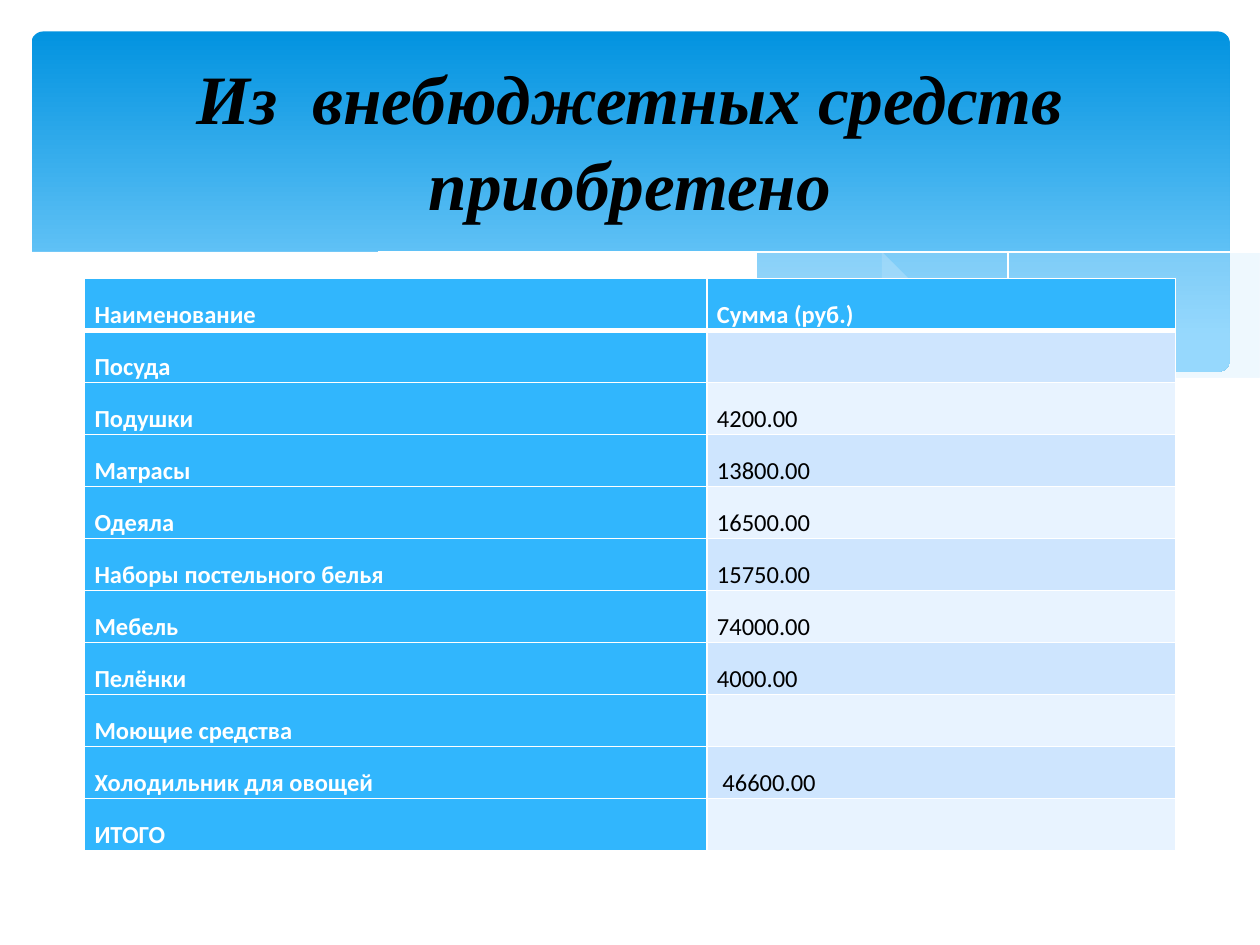
from dataclasses import dataclass

from lxml.etree import SubElement
from pptx import Presentation
from pptx.dml.color import RGBColor
from pptx.enum.shapes import MSO_SHAPE
from pptx.enum.text import MSO_ANCHOR, PP_ALIGN
from pptx.oxml.ns import qn
from pptx.util import Inches, Pt


@dataclass(frozen=True)
class Theme:
    sky_top: str = "0293E0"
    sky_bottom: str = "83D3FE"
    wave: str = "C6E7FC"
    white: str = "FFFFFF"
    black: str = "000000"
    accent: str = "31B6FD"
    bands: tuple = ("CEE5FE", "E8F3FF")
    title_font: str = "Times New Roman"
    table_font: str = "Calibri"
    title_size: float = 39.6
    table_size: float = 14


THEME = Theme()

TITLE_LINES = ("Из  внебюджетных средств", "приобретено")
PURCHASES = [
    ("Наименование", "Сумма (руб.)"),
    ("Посуда", ""),
    ("Подушки", "4200.00"),
    ("Матрасы", "13800.00"),
    ("Одеяла", "16500.00"),
    ("Наборы постельного белья", "15750.00"),
    ("Мебель", "74000.00"),
    ("Пелёнки", "4000.00"),
    ("Моющие средства", ""),
    ("Холодильник для овощей", "\u00a046600.00"),
    ("ИТОГО", ""),
]

# Wave edges, in inches; smooth() rounds them
RIGHT_WAVE_TOP = [(9.76, 2), (9.35, 2.07), (8.61, 2.23), (7.79, 2.42), (7.06, 2.57), (6.61, 2.65)]
RIGHT_WAVE_BOTTOM = [(6.61, 2.65), (7.05, 2.71), (7.57, 2.76), (8.03, 2.78), (8.54, 2.76),
                     (8.97, 2.7), (9.35, 2.62), (9.76, 2.47)]
MIDDLE_WAVE_TOP = [(8.93, 2.73), (8.37, 2.65), (7.41, 2.47), (6.29, 2.22), (5.55, 2.05),
                   (4.89, 1.94), (4.2, 1.87), (3.61, 1.85), (3.13, 1.88), (2.86, 1.91)]
MIDDLE_WAVE_BOTTOM = [(2.86, 1.91), (3.62, 2.03), (4.49, 2.22), (5.66, 2.48), (6.5, 2.64),
                      (7.22, 2.74), (7.85, 2.78), (8.38, 2.78), (8.93, 2.73)]
LONG_CREST = [(3.09, 1.95), (3.44, 1.9), (4.01, 1.87), (4.69, 1.89), (5.56, 1.97),
              (6.36, 2.08), (7.27, 2.26), (8.31, 2.51), (9.07, 2.72)]
RIGHT_CREST = [(6.13, 2.57), (6.72, 2.41), (7.48, 2.23), (8.36, 2.04), (9.1, 1.92), (9.75, 1.85)]
FRONT_WAVE_TOP = [(9.77, 2.46), (9.3, 2.62), (8.75, 2.73), (8.09, 2.77), (7.44, 2.74),
                  (6.68, 2.65), (5.79, 2.5), (5.03, 2.33), (4.18, 2.13), (3.4, 1.97),
                  (2.71, 1.88), (2.11, 1.84), (1.61, 1.84), (1.06, 1.89), (0.59, 1.99), (0.23, 2.13)]
FRONT_WAVE_BASE = [(0.23, 3.29), (9.77, 3.29)]


def rgb(color):
    return RGBColor.from_string(color)


def smooth(knots, steps=5):
    """Catmull-Rom curve through the knots."""
    padded = [knots[0], *knots, knots[-1]]
    curve = [knots[0]]
    for a, b, c, d in zip(padded, padded[1:], padded[2:], padded[3:]):
        for t in (step / steps for step in range(1, steps + 1)):
            curve.append(tuple(
                (2 * q + (r - p) * t + (2 * p - 5 * q + 4 * r - s) * t**2
                 + (3 * q - p - 3 * r + s) * t**3) / 2
                for p, q, r, s in zip(a, b, c, d)))
    return curve


def add_outline(slide, points, closed):
    builder = slide.shapes.build_freeform(*points[0], scale=Inches(1))
    builder.add_line_segments(points[1:], close=closed)
    outline = builder.convert_to_shape()
    outline.shadow.inherit = False
    return outline


def add_wave(slide, points, color, opacity=100):
    wave = add_outline(slide, points, closed=True)
    wave.fill.solid()
    wave.fill.fore_color.rgb = rgb(color)
    wave.line.fill.background()
    if opacity < 100:
        color_node = wave.fill._xPr.find(qn("a:solidFill"))[0]
        SubElement(color_node, qn("a:alpha"), val=str(opacity * 1000))


def add_crest(slide, knots):
    crest = add_outline(slide, smooth(knots), closed=False)
    crest.fill.background()
    crest.line.color.rgb = rgb(THEME.white)
    crest.line.width = Pt(0)


def add_sky(slide):
    sky = slide.shapes.add_shape(MSO_SHAPE.ROUNDED_RECTANGLE,
                                 Inches(0.25), Inches(0.25), Inches(9.51), Inches(2.7))
    sky.adjustments[0] = 0.034
    sky.shadow.inherit = False
    sky.line.fill.background()
    sky.fill.gradient()
    sky.fill.gradient_angle = 270
    stops = ((0, THEME.sky_top), (0.9, THEME.sky_bottom))
    for stop, (position, color) in zip(sky.fill.gradient_stops, stops):
        stop.position = position
        stop.color.rgb = rgb(color)


def add_run(paragraph, text, font, size, color, bold=False, italic=False):
    run = paragraph.add_run()
    run.text = text
    run.font.name = font
    run.font.size = Pt(size)
    run.font.color.rgb = rgb(color)
    run.font.bold = bold
    run.font.italic = italic


def add_title(slide):
    title = slide.shapes.add_textbox(Inches(0.5), Inches(0.41), Inches(9), Inches(1.37))
    frame = title.text_frame
    frame.word_wrap = True
    frame.vertical_anchor = MSO_ANCHOR.MIDDLE
    paragraph = frame.paragraphs[0]
    paragraph.alignment = PP_ALIGN.CENTER
    paragraph.line_spacing = 1.04
    for index, line in enumerate(TITLE_LINES):
        if index:
            paragraph.add_line_break()
        add_run(paragraph, line, THEME.title_font, THEME.title_size, THEME.black,
                bold=True, italic=True)


def set_borders(cell, top, bottom):
    properties = cell._tc.get_or_add_tcPr()
    for side, width in (("L", 1), ("R", 1), ("T", top), ("B", bottom)):
        border = SubElement(properties, qn(f"a:ln{side}"), w=str(Pt(width)))
        fill = SubElement(border, qn("a:solidFill"))
        SubElement(fill, qn("a:srgbClr"), val=THEME.white)


def fill_cell(cell, text, row, column):
    strong = row == 0 or column == 0
    set_borders(cell, top=3 if row == 1 else 1, bottom=3 if row == 0 else 1)
    cell.fill.solid()
    cell.fill.fore_color.rgb = rgb(THEME.accent if strong else THEME.bands[(row - 1) % 2])
    cell.vertical_anchor = MSO_ANCHOR.BOTTOM
    cell.margin_left, cell.margin_right = Inches(0.08), Inches(0.07)
    cell.margin_top = cell.margin_bottom = 0
    if text:
        paragraph = cell.text_frame.paragraphs[0]
        paragraph.line_spacing = 1.15
        add_run(paragraph, text, THEME.table_font, THEME.table_size,
                THEME.white if strong else THEME.black, bold=strong)


def add_purchases(slide):
    purchases = slide.shapes.add_table(len(PURCHASES), 2, Inches(0.67), Inches(2.21),
                                       Inches(8.66), Inches(4.54)).table
    for column, width in zip(purchases.columns, (4.94, 3.72)):
        column.width = Inches(width)
    for row, texts in enumerate(PURCHASES):
        for column, text in enumerate(texts):
            fill_cell(purchases.cell(row, column), text, row, column)


def main():
    deck = Presentation()
    deck.slide_width, deck.slide_height = Inches(10), Inches(7.5)
    slide = deck.slides.add_slide(deck.slide_layouts[6])

    # Sky banner with waves
    add_sky(slide)
    add_wave(slide, smooth(RIGHT_WAVE_TOP) + smooth(RIGHT_WAVE_BOTTOM), THEME.wave, 29)
    add_wave(slide, smooth(MIDDLE_WAVE_TOP) + smooth(MIDDLE_WAVE_BOTTOM), THEME.wave, 40)
    add_crest(slide, LONG_CREST)
    add_crest(slide, RIGHT_CREST)
    add_wave(slide, smooth(FRONT_WAVE_TOP) + FRONT_WAVE_BASE, THEME.white)

    # Purchases and heading
    add_purchases(slide)
    add_title(slide)
    deck.save("out.pptx")


if __name__ == "__main__":
    main()
